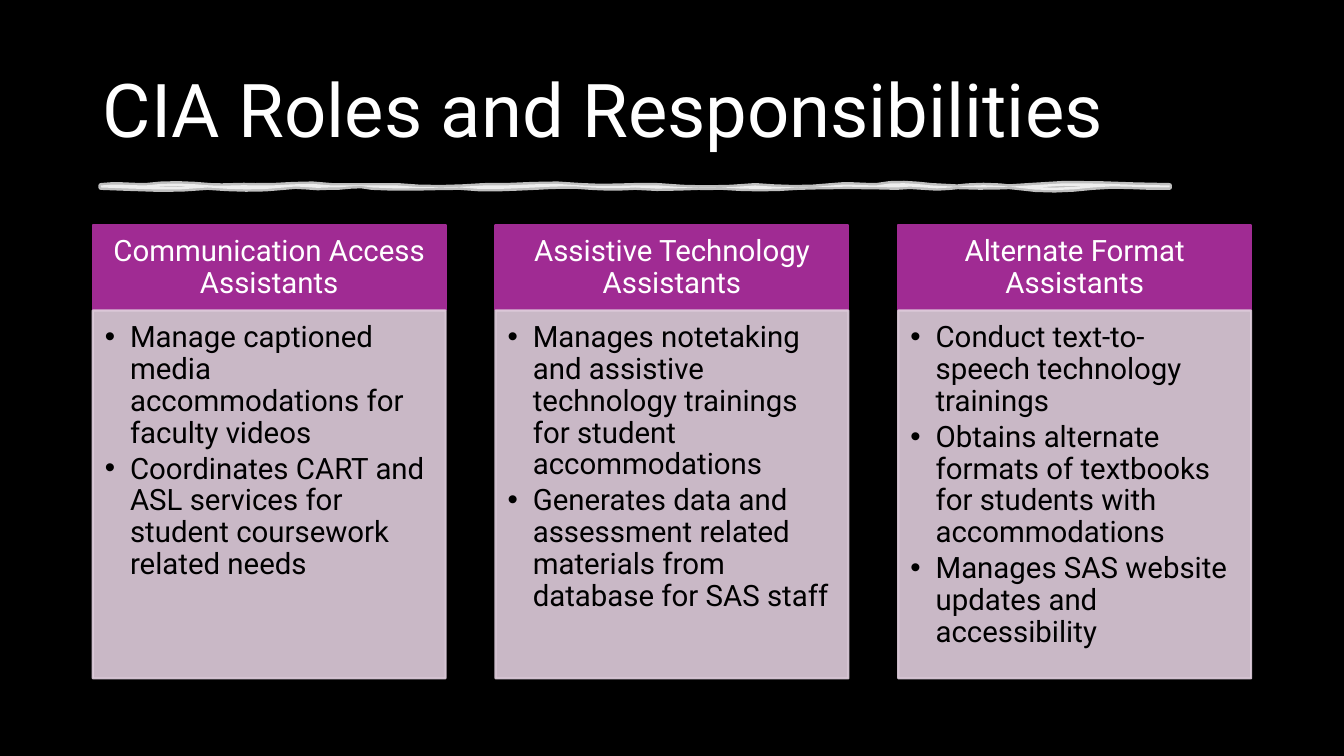
"""Build the slide on the roles and responsibilities of CIA assistants."""
from lxml.etree import SubElement
from pptx import Presentation
from pptx.dml.color import RGBColor
from pptx.enum.shapes import MSO_SHAPE as Shape
from pptx.enum.text import MSO_ANCHOR as Anchor, MSO_AUTO_SIZE as AutoSize, PP_ALIGN as Align
from pptx.oxml.ns import qn
from pptx.util import Inches, Pt

BLACK = RGBColor(0x00, 0x00, 0x00)
WHITE = RGBColor(0xFF, 0xFF, 0xFF)
PURPLE = RGBColor(0xA0, 0x2B, 0x93)
MAUVE = RGBColor(0xDF, 0xCD, 0xDC)
FONT = "Roboto"

SLIDE_WIDTH, SLIDE_HEIGHT = 13.33, 7.5
LEFT, RIGHT, ROLE_WIDTH = 0.92, 12.41, 3.5
HEADER_TOP, HEADER_HEIGHT, DUTIES_HEIGHT = 2.23, 0.85, 3.65
HEADER_INSETS = (0.16, 0.09, 0.16, 0.09)
DUTIES_INSETS = (0.12, 0.12, 0.16, 0.18)

ROLES = [
    ("Communication Access Assistants", [
        "Manage captioned media accommodations for faculty videos",
        "Coordinates CART and ASL services for student coursework related needs"]),
    ("Assistive Technology Assistants", [
        "Manages notetaking and assistive technology trainings for student accommodations",
        "Generates data and assessment related materials from database for SAS staff"]),
    ("Alternate Format Assistants", [
        "Conduct text-to-speech technology trainings",
        "Obtains alternate formats of textbooks for students with accommodations",
        "Manages SAS website updates and accessibility"]),
]

RULE_LEFT, RULE_RIGHT, RULE_TOP, RULE_BOTTOM = 1.0, 11.6, 1.84, 1.86
CURVE_STEPS = 4
# Each wave is (end x, first bend, second bend), with bends in hundredths of an inch.
TOP_WAVES = [
    (1.44, -2, 0), (2.09, -3, -2), (2.53, 1, -1), (3.29, 1, -4), (3.94, 0, 0),
    (4.8, 3, 2), (5.77, 1, -4), (6.53, 2, -1), (7.49, 3, 3), (8.25, 2, 3),
    (8.69, -2, 0), (9.24, -4, -2), (10.2, 2, 3), (11.6, -5, 0)]
BOTTOM_WAVES = [
    (10.84, 1, -3), (10.08, 3, 4), (9.43, -3, -3), (8.89, 3, -3), (7.92, -1, -1),
    (7.16, 2, 2), (6.3, -1, 3), (5.86, 1, 1), (5.31, -2, -1), (4.56, 1, 3),
    (3.69, 0, 2), (3.26, -4, 1), (2.82, 2, -3), (2.06, 3, 2), (1, 4, 1)]


def set_alpha(color_format, percent):
    """Make a solid colour partly transparent."""
    color = color_format._color._xClr
    SubElement(color, qn("a:alpha")).set("val", str(percent * 1000))


def paint(shape, color, line_width, alpha=100):
    """Give a shape the same colour for its fill and its line."""
    shape.shadow.inherit = False
    shape.fill.solid()
    shape.line.width = Pt(line_width)
    for color_format in (shape.fill.fore_color, shape.line.color):
        color_format.rgb = color
        if alpha < 100:
            set_alpha(color_format, alpha)


def style_text(paragraph, size, color):
    """Set the line spacing and font of a paragraph."""
    paragraph.line_spacing = 0.9
    for run in paragraph.runs:
        run.font.name = FONT
        run.font.size = Pt(size)
        run.font.color.rgb = color


def add_bullet(paragraph):
    """Give a paragraph a hanging round bullet."""
    properties = paragraph._p.get_or_add_pPr()
    properties.set("marL", str(Inches(0.25)))
    properties.set("indent", str(Inches(-0.25)))
    SubElement(properties, qn("a:buFont")).set("typeface", "Arial")
    SubElement(properties, qn("a:buChar")).set("char", "•")


def add_backdrop(slide):
    """Put a black rectangle behind everything else."""
    backdrop = slide.shapes.add_shape(
        Shape.RECTANGLE, 0, 0, Inches(SLIDE_WIDTH), Inches(SLIDE_HEIGHT))
    backdrop.shadow.inherit = False
    backdrop.fill.solid()
    backdrop.fill.fore_color.rgb = BLACK
    backdrop.line.fill.background()
    slide.shapes.title._element.addprevious(backdrop._element)


def add_panel(slide, left, top, height, color, insets, alpha=100):
    """Add a coloured rectangle and return its text frame."""
    panel = slide.shapes.add_shape(
        Shape.RECTANGLE, Inches(left), Inches(top), Inches(ROLE_WIDTH), Inches(height))
    paint(panel, color, 1.5, alpha)
    frame = panel.text_frame
    frame.word_wrap = True
    (frame.margin_left, frame.margin_top,
     frame.margin_right, frame.margin_bottom) = map(Inches, insets)
    return frame


def add_role(slide, left, role, duties):
    """Add one column with a role header and its duties."""
    header = add_panel(slide, left, HEADER_TOP, HEADER_HEIGHT, PURPLE, HEADER_INSETS)
    header.vertical_anchor = Anchor.MIDDLE
    header.text = role
    header.paragraphs[0].alignment = Align.CENTER
    style_text(header.paragraphs[0], 21, WHITE)

    body = add_panel(slide, left, HEADER_TOP + HEADER_HEIGHT, DUTIES_HEIGHT,
                     MAUVE, DUTIES_INSETS, alpha=90)
    body.vertical_anchor = Anchor.TOP
    body.text = "\n".join(duties)
    for duty in body.paragraphs:
        duty.alignment = Align.LEFT
        duty.space_after = Pt(3)
        add_bullet(duty)
        style_text(duty, 21, BLACK)


def wavy_edge(start, level, waves):
    """Return the points of a wavy edge that starts and ends each wave on its level."""
    points = [(Inches(start), Inches(level))]
    for end, first, second in waves:
        for step in range(1, CURVE_STEPS + 1):
            t = step / CURVE_STEPS
            bend = 3 * t * (1 - t) * ((1 - t) * first + t * second) / 100
            points.append((Inches(start + (end - start) * t), Inches(level + bend)))
        start = end
    return points


def add_rule(slide):
    """Add the hand-drawn rule under the title."""
    points = (wavy_edge(RULE_LEFT, RULE_TOP, TOP_WAVES)
              + wavy_edge(RULE_RIGHT, RULE_BOTTOM, BOTTOM_WAVES))
    builder = slide.shapes.build_freeform(*points[0])
    builder.add_line_segments(points[1:], close=True)
    paint(builder.convert_to_shape(), WHITE, 3.5, alpha=75)


def set_title(slide, text):
    """Place and format the slide title."""
    title = slide.shapes.title
    title.left, title.top = Inches(0.92), Inches(0.4)
    title.width, title.height = Inches(11.5), Inches(1.45)
    frame = title.text_frame
    frame.text = text
    frame.word_wrap = True
    frame.auto_size = AutoSize.NONE
    frame.vertical_anchor = Anchor.MIDDLE
    frame.paragraphs[0].alignment = Align.LEFT
    style_text(frame.paragraphs[0], 53, WHITE)


def main():
    """Build and save the presentation."""
    deck = Presentation()
    deck.slide_width, deck.slide_height = Inches(SLIDE_WIDTH), Inches(SLIDE_HEIGHT)
    slide = deck.slides.add_slide(deck.slide_layouts.get_by_name("Title Only"))
    add_backdrop(slide)
    set_title(slide, "CIA Roles and Responsibilities")
    add_rule(slide)
    pitch = (RIGHT - LEFT - ROLE_WIDTH) / (len(ROLES) - 1)
    for column, (role, duties) in enumerate(ROLES):
        add_role(slide, LEFT + column * pitch, role, duties)
    deck.save("out.pptx")


if __name__ == "__main__":
    main()
